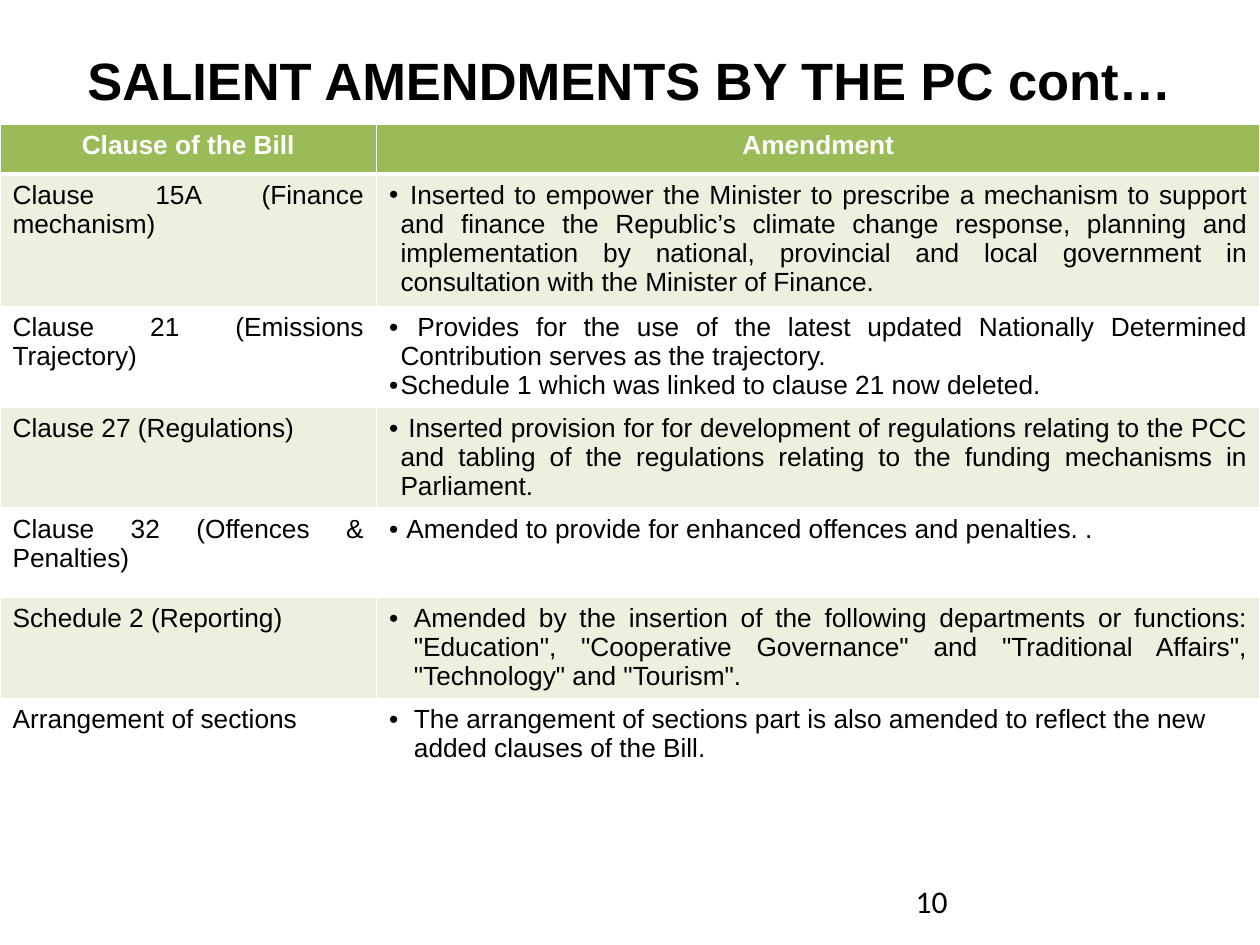
import lxml.etree
import pptx
import pptx.dml.color
import pptx.enum.text
import pptx.oxml.ns
import pptx.util

Cm = pptx.util.Cm
Pt = pptx.util.Pt
ALIGN = pptx.enum.text.PP_ALIGN
ANCHOR = pptx.enum.text.MSO_ANCHOR
qn = pptx.oxml.ns.qn

BLACK = pptx.dml.color.RGBColor(0x00, 0x00, 0x00)
WHITE = pptx.dml.color.RGBColor(0xFF, 0xFF, 0xFF)
GREEN = pptx.dml.color.RGBColor(0x9B, 0xBB, 0x59)
PALE_GREEN = pptx.dml.color.RGBColor(0xEB, 0xF1, 0xDE)

TITLE_FORMAT = {"name": "Arial", "size": Pt(30), "bold": True}
NUMBER_FORMAT = {"name": "Calibri", "size": Pt(18)}
HEADER_FORMAT = {"name": "Arial", "size": Pt(15), "bold": True}
BODY_FORMAT = {"name": "Arial", "size": Pt(15), "bold": False}

NARROW = Cm(0.23)
WIDE = Cm(0.5)
COLUMN_WIDTHS = (Cm(7.59), Cm(17.81))
HEADER_HEIGHT = Cm(1)
HEADERS = ("Clause of the Bill", "Amendment")

AMENDMENTS = (
    ("Clause 15A (Finance mechanism)",
     (" Inserted to empower the Minister to prescribe a mechanism to support and finance "
      "the Republic’s climate change response, planning and implementation by national, "
      "provincial and local government in consultation with the Minister of Finance.",),
     Cm(2.34), {"indent": NARROW, "level": 1}),
    ("Clause 21 (Emissions Trajectory)",
     (" Provides for the use of the latest updated Nationally Determined Contribution "
      "serves as the trajectory.",
      "Schedule 1 which was linked to clause 21 now deleted."),
     Cm(1.65), {"indent": NARROW}),
    ("Clause 27 (Regulations)",
     (" Inserted provision for for development of regulations relating to the PCC and "
      "tabling of the regulations relating to the funding mechanisms in Parliament.",),
     Cm(1.63), {"indent": NARROW}),
    ("Clause 32 (Offences & Penalties)",
     (" Amended to provide for enhanced offences and penalties. .",),
     Cm(1.8), {"indent": NARROW}),
    ("Schedule 2 (Reporting)",
     ("Amended by the insertion of the following departments or functions: \"Education\", "
      "\"Cooperative Governance\" and \"Traditional Affairs\", \"Technology\" and \"Tourism\".",),
     Cm(1.78), {"indent": WIDE, "level": 1}),
    ("Arrangement of sections",
     ("The arrangement of sections part is also amended to reflect the new added clauses "
      "of the Bill.",),
     Cm(1.78), {"indent": WIDE, "level": 1, "alignment": ALIGN.LEFT}),
)


def set_attributes(target, values):
    for name, value in values.items():
        setattr(target, name, value)


def add_bullet(paragraph, indent):
    properties = paragraph._p.get_or_add_pPr()
    properties.set("marL", str(int(indent)))
    properties.set("indent", str(-int(indent)))
    lxml.etree.SubElement(properties, qn("a:buFont")).set("typeface", "Arial")
    lxml.etree.SubElement(properties, qn("a:buChar")).set("char", "•")


def write_text(frame, texts, font_format, color=BLACK, alignment=ALIGN.LEFT,
               indent=None, level=0):
    for index, text in enumerate(texts):
        paragraph = frame.add_paragraph() if index else frame.paragraphs[0]
        set_attributes(paragraph, {"alignment": alignment, "level": level})
        if indent is not None:
            add_bullet(paragraph, indent)
        run = paragraph.add_run()
        run.text = text
        set_attributes(run.font, font_format)
        run.font.color.rgb = color


def set_borders(cell, widths):
    properties = cell._tc.get_or_add_tcPr()
    for side, width in widths.items():
        line = lxml.etree.SubElement(properties, qn("a:ln" + side), w=str(int(Pt(width))))
        fill = lxml.etree.SubElement(line, qn("a:solidFill"))
        lxml.etree.SubElement(fill, qn("a:srgbClr"), val=str(WHITE))


def format_cell(cell, color, borders):
    set_borders(cell, borders)
    cell.margin_bottom = Cm(0)
    cell.fill.solid()
    cell.fill.fore_color.rgb = color


def add_title(slide, text):
    title = slide.shapes.title
    set_attributes(title, {"left": Cm(0), "top": Cm(0.71),
                           "width": Cm(25.4), "height": Cm(1.8)})
    set_attributes(title.text_frame, {"vertical_anchor": ANCHOR.MIDDLE, "word_wrap": True,
                                      "auto_size": pptx.enum.text.MSO_AUTO_SIZE.NONE})
    write_text(title.text_frame, (text,), TITLE_FORMAT, alignment=ALIGN.CENTER)


def add_page_number(slide, text):
    box = slide.shapes.add_textbox(Cm(18.21), Cm(17.65), Cm(5.92), Cm(1.02))
    box.text_frame.word_wrap = True
    write_text(box.text_frame, (text,), NUMBER_FORMAT)


def add_amendment_table(slide):
    heights = [HEADER_HEIGHT] + [height for _, _, height, _ in AMENDMENTS]
    table = slide.shapes.add_table(len(heights), len(COLUMN_WIDTHS), Cm(0), Cm(2.51),
                                   sum(COLUMN_WIDTHS), sum(heights)).table
    for column, width in zip(table.columns, COLUMN_WIDTHS):
        column.width = width
    for row, height in zip(table.rows, heights):
        row.height = height
    for column, header in enumerate(HEADERS):
        cell = table.cell(0, column)
        format_cell(cell, GREEN, {"L": 1, "R": 1, "T": 1, "B": 3})
        write_text(cell.text_frame, (header,), HEADER_FORMAT, WHITE, ALIGN.CENTER)
    for row, (clause, changes, _, layout) in enumerate(AMENDMENTS, start=1):
        color = PALE_GREEN if row % 2 else WHITE
        borders = {"L": 1, "R": 1, "T": 3 if row == 1 else 1, "B": 1}
        columns = ((clause,), {}), (changes, layout)
        for column, (texts, options) in enumerate(columns):
            cell = table.cell(row, column)
            format_cell(cell, color, borders)
            write_text(cell.text_frame, texts, BODY_FORMAT,
                       **{"alignment": ALIGN.JUSTIFY, **options})


def main():
    presentation = pptx.Presentation()
    set_attributes(presentation, {"slide_width": Cm(25.4), "slide_height": Cm(19.05)})
    slide = presentation.slides.add_slide(presentation.slide_layouts[5])
    add_title(slide, "SALIENT AMENDMENTS BY THE PC cont…")
    add_page_number(slide, "10")
    add_amendment_table(slide)
    presentation.save("out.pptx")


if __name__ == "__main__":
    main()
